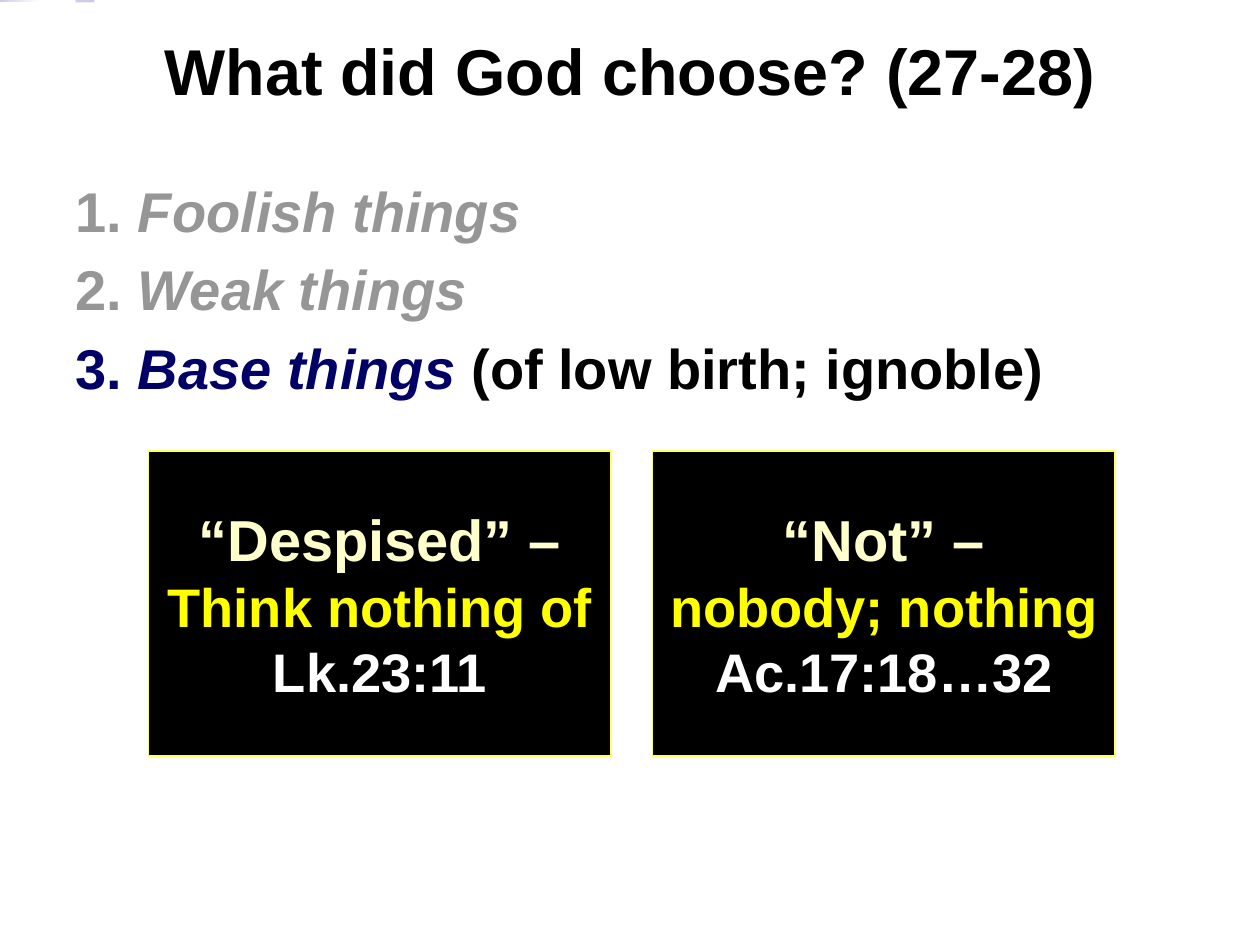
from lxml.etree import SubElement
from pptx import Presentation
from pptx.dml.color import RGBColor
from pptx.enum.shapes import MSO_SHAPE
from pptx.enum.text import MSO_ANCHOR, MSO_AUTO_SIZE, PP_ALIGN
from pptx.oxml.ns import qn
from pptx.util import Inches, Pt

RECT = MSO_SHAPE.RECTANGLE
MIDDLE = MSO_ANCHOR.MIDDLE
FIXED = MSO_AUTO_SIZE.NONE
CENTER = PP_ALIGN.CENTER
COLORS = {
    "black": "000000", "white": "FFFFFF", "gray": "969696", "navy": "000066",
    "lilac": "CCCCE6", "edge": "FFFF66", "cream": "FFFFCC", "yellow": "FFFF00",
}


class Deck:
    """Holds the style and the current slide."""

    def __init__(self):
        self.prs = Presentation()
        self.prs.slide_width, self.prs.slide_height = Inches(10), Inches(7.5)
        self.slide = self.prs.slides.add_slide(self.prs.slide_layouts[1])

    def color(self, name):
        return RGBColor.from_string(COLORS[name])

    def paint(self, shape, name):
        shape.fill.solid()
        shape.fill.fore_color.rgb = self.color(name)

    def style(self, font, size, name=None):
        font.name, font.size, font.bold = "Arial", Pt(size), True
        if name:
            font.color.rgb = self.color(name)

    def place(self, shape, left, top, width, height):
        shape.left, shape.top = Inches(left), Inches(top)
        shape.width, shape.height = Inches(width), Inches(height)

    def rect(self, left, top, width, height, fill):
        shape = self.slide.shapes.add_shape(
            RECT, Inches(left), Inches(top), Inches(width), Inches(height))
        shape.shadow.inherit = False
        self.paint(shape, fill)
        shape.line.fill.background()
        return shape

    def fade(self, left, top, width, height, start, end):
        fill = self.rect(left, top, width, height, start).fill
        fill.gradient()
        fill.gradient_angle = 0
        for stop, name in zip(fill.gradient_stops, (start, end)):
            stop.color.rgb = self.color(name)

    def title(self, text):
        shape = self.slide.shapes.title
        self.place(shape, 0, 0.02, 10, 1.06)
        self.paint(shape, "white")
        frame = shape.text_frame
        frame.text = text
        frame.auto_size, frame.vertical_anchor = FIXED, MIDDLE
        para = frame.paragraphs[0]
        para.alignment = CENTER
        self.style(para.font, 37, "black")

    def points(self, items):
        shape = self.slide.placeholders[1]
        self.place(shape, 0.5, 1.35, 9, 5.4)
        frame = shape.text_frame
        frame.auto_size = FIXED
        for num, (name, term, note) in enumerate(items, 1):
            para = frame.paragraphs[0] if num == 1 else frame.add_paragraph()
            props = para._p.get_or_add_pPr()
            props.set("marL", str(Inches(0.38)))
            props.set("indent", str(Inches(-0.38)))
            SubElement(props, qn("a:buNone"))
            self.style(para.font, 32)
            runs = [(f"{num}. ", name, False), (term, name, True)]
            if note:
                runs.append((note, "black", False))
            for text, tint, slant in runs:
                run = para.add_run()
                run.text = text
                run.font.italic = slant
                run.font.color.rgb = self.color(tint)

    def card(self, left, lines):
        shape = self.rect(left, 3.58, 3.67, 2.42, "black")
        shape.line.color.rgb = self.color("edge")
        shape.line.width = Pt(0.75)
        frame = shape.text_frame
        frame.word_wrap, frame.vertical_anchor = False, MIDDLE
        frame.text = "\n".join(lines)
        looks = ((33, "cream"), (31, "yellow"), (31, "white"))
        for para, look in zip(frame.paragraphs, looks):
            para.alignment = CENTER
            self.style(para.font, *look)


def main():
    deck = Deck()
    deck.fade(0, 0, 0.31, 0.02, "lilac", "white")
    deck.rect(0.6, 0, 0.15, 0.02, "lilac")
    deck.title("What did God choose? (27-28)")
    deck.points([
        ("gray", "Foolish things", ""),
        ("gray", "Weak things", ""),
        ("navy", "Base things ", "(of low birth; ignoble)"),
    ])
    cards = [
        ("“Despised” –", "Think nothing of", "Lk.23:11"),
        ("“Not” –", "nobody; nothing", "Ac.17:18…32"),
    ]
    for col, lines in enumerate(cards):
        deck.card(1.18 + 4 * col, lines)
    deck.prs.save("out.pptx")


if __name__ == "__main__":
    main()
